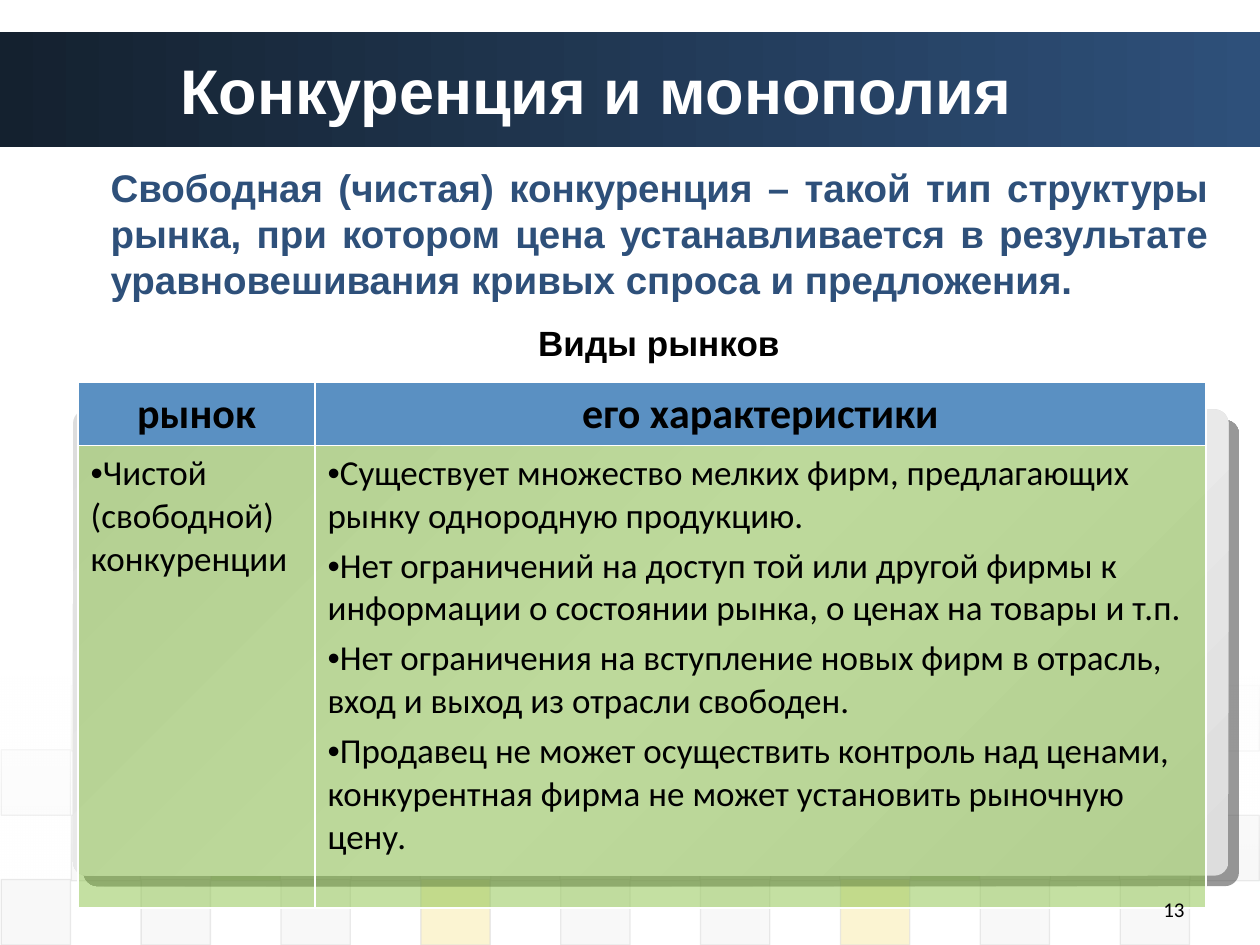
from typing import NamedTuple

from pptx import Presentation
from pptx.dml.color import RGBColor
from pptx.enum.shapes import MSO_SHAPE as Kind
from pptx.enum.text import MSO_ANCHOR as Anchor, PP_ALIGN as Align
from pptx.oxml import parse_xml
from pptx.oxml.ns import nsdecls, qn
from pptx.util import Inches, Pt


class Box(NamedTuple):
    left: float
    top: float
    width: float
    height: float


class Row(NamedTuple):
    top: float
    first: int
    hues: str
    alpha: int


class Stop(NamedTuple):
    pos: int
    hue: str
    alpha: int = 100


class Style(NamedTuple):
    size: int
    font: str
    hue: str
    bold: bool = False
    align: Align = Align.LEFT
    gap: float = 0


HUES = {"D": "DDDDDD", "E": "EAEAEA", "G": "8AC246", "Y": "EFC821"}
ROWS = [
    Row(5.44, 1, "YEEYDYEGE", 5),
    Row(5.95, 0, "DDDDGDDDY", 10),
    Row(6.47, 1, "DGDDDDGDD", 20),
    Row(6.98, 0, "DDDYDDYDD", 20),
]
STEP = 0.555
NAVY = "2E507A"
HEAD = Style(24, "Calibri", "000000", True, Align.CENTER)
BODY = Style(20, "Calibri", "000000", gap=4)
HEADS = ["рынок", "его характеристики"]
TRAITS = [
    ["Чистой (свободной) конкуренции"],
    [
        "Существует множество мелких фирм, предлагающих рынку однородную продукцию.",
        "Нет ограничений на доступ той или другой фирмы к информации о состоянии рынка, о ценах на товары и т.п.",
        "Нет ограничения на вступление новых фирм в отрасль, вход и выход из отрасли свободен.",
        "Продавец не может осуществить контроль над ценами, конкурентная фирма не может установить рыночную цену.",
    ],
]


def rgb(hue: str) -> RGBColor:
    return RGBColor.from_string(hue)


def place(box: Box) -> list:
    return [Inches(v) for v in box]


def fade(node, alpha: int) -> None:
    for item in node.iter(qn("a:srgbClr")):
        item.append(parse_xml(f'<a:alpha {nsdecls("a")} val="{alpha * 1000}"/>'))


def add_shape(slide, box: Box, kind: Kind = Kind.RECTANGLE):
    shape = slide.shapes.add_shape(kind, *place(box))
    shape.shadow.inherit = False
    shape.fill.background()
    shape.line.fill.background()
    return shape


def blend(shape, stops: list[Stop], angle: int) -> None:
    marks = "".join(
        f'<a:gs pos="{s.pos * 1000}"><a:srgbClr val="{s.hue}">'
        f'<a:alpha val="{s.alpha * 1000}"/></a:srgbClr></a:gs>'
        for s in stops
    )
    props = shape._element.spPr
    props.replace(props.find(qn("a:noFill")), parse_xml(
        f'<a:gradFill {nsdecls("a")} rotWithShape="1"><a:gsLst>{marks}</a:gsLst>'
        f'<a:lin ang="{angle * 60000}" scaled="0"/></a:gradFill>'))


def add_tiles(slide, row: Row) -> None:
    for i, key in enumerate(row.hues):
        left = 0.01 + STEP * (row.first + 2 * i)
        tile = add_shape(slide, Box(left, row.top, 0.55, 0.52))
        tile.fill.solid()
        tile.fill.fore_color.rgb = rgb(HUES[key])
        tile.line.color.rgb = rgb(HUES["D"])
        tile.line.width = Pt(0.75)
        props = tile._element.spPr
        fade(props.find(qn("a:solidFill")), row.alpha)
        fade(props.find(qn("a:ln")), 60)


def write(frame, lines: list[str], style: Style, mark: str = "") -> None:
    frame.word_wrap = True
    for i, line in enumerate(lines):
        para = frame.add_paragraph() if i else frame.paragraphs[0]
        para.text = line
        para.alignment = style.align
        if i:
            para.space_before = Pt(style.gap)
        if mark:
            props = para._p.get_or_add_pPr()
            props.set("marL", "0")
            props.set("indent", "0")
            props.append(parse_xml(f'<a:buFont {nsdecls("a")} typeface="Arial"/>'))
            props.append(parse_xml(f'<a:buChar {nsdecls("a")} char="{mark}"/>'))
        for run in para.runs:
            run.font.size = Pt(style.size)
            run.font.name = style.font
            run.font.bold = style.bold
            run.font.color.rgb = rgb(style.hue)


def add_text(slide, box: Box, text: str, style: Style) -> None:
    write(slide.shapes.add_textbox(*place(box)).text_frame, [text], style)


def paint(cell, hue: str, alpha: int) -> None:
    cell.fill.solid()
    cell.fill.fore_color.rgb = rgb(hue)
    props = cell._tc.tcPr
    fade(props, alpha)
    for i, side in enumerate("LRTB"):
        props.insert(i, parse_xml(
            f'<a:ln{side} {nsdecls("a")} w="12700"><a:solidFill>'
            f'<a:srgbClr val="FFFFFF"/></a:solidFill></a:ln{side}>'))


def add_grid(slide) -> None:
    grid = slide.shapes.add_table(2, 2, *place(Box(0.62, 3.03, 8.95, 4.17))).table
    for col, width in zip(grid.columns, [1.88, 7.07]):
        col.width = Inches(width)
    for row, height in zip(grid.rows, [0.5, 3.67]):
        row.height = Inches(height)
    for i, (head, lines) in enumerate(zip(HEADS, TRAITS)):
        top, low = grid.cell(0, i), grid.cell(1, i)
        paint(top, "5A90C2", 100)
        paint(low, HUES["G"], 50)
        top.vertical_anchor = Anchor.MIDDLE
        write(top.text_frame, [head], HEAD)
        write(low.text_frame, lines, BODY, "•")


def main() -> None:
    deck = Presentation()
    deck.slide_width, deck.slide_height = Inches(10), Inches(7.5)
    slide = deck.slides.add_slide(deck.slide_layouts[5])

    band = add_shape(slide, Box(0, 0.25, 10, 0.92))
    blend(band, [Stop(0, "14212F"), Stop(100, NAVY)], 0)
    for row in ROWS:
        add_tiles(slide, row)
    veil = add_shape(slide, Box(0, 5.37, 10, 1.62))
    blend(veil, [Stop(0, "FFFFFF", 90), Stop(100, "FFFFFF", 0)], 90)

    panel = add_shape(slide, Box(0.58, 3.25, 9.17, 3.7), Kind.ROUNDED_RECTANGLE)
    panel.adjustments[0] = 0.03
    blend(panel, [Stop(0, "DDDDDD"), Stop(50, "F2F2F2"), Stop(100, "DDDDDD")], 45)
    panel._element.spPr.find(qn("a:effectLst")).append(parse_xml(
        f'<a:outerShdw {nsdecls("a")} dist="{Pt(8.5)}" dir="2700000" algn="ctr" '
        'rotWithShape="0"><a:srgbClr val="333333"><a:alpha val="50000"/>'
        '</a:srgbClr></a:outerShdw>'))

    title = slide.shapes.title
    title.left, title.top, title.width, title.height = place(Box(1.33, 0.25, 8.08, 0.92))
    title.text_frame.vertical_anchor = Anchor.MIDDLE
    write(title.text_frame, ["Конкуренция и монополия"], Style(36, "Arial", "FFFFFF", True))
    slide.shapes._spTree.append(title._element)

    add_grid(slide)
    add_text(slide, Box(0.78, 1.25, 8.91, 1.21),
             "Свободная (чистая) конкуренция – такой тип структуры рынка, при котором цена "
             "устанавливается в результате уравновешивания кривых спроса и предложения.",
             Style(22, "Arial", NAVY, True, Align.JUSTIFY))
    add_text(slide, Box(7.17, 7.07, 2.33, 0.33), "13",
             Style(12, "Calibri", "000000", align=Align.RIGHT))
    add_text(slide, Box(2.73, 2.5, 5, 0.44), "Виды рынков",
             Style(20, "Arial", "000000", True, Align.CENTER))
    deck.save("out.pptx")


if __name__ == "__main__":
    main()
